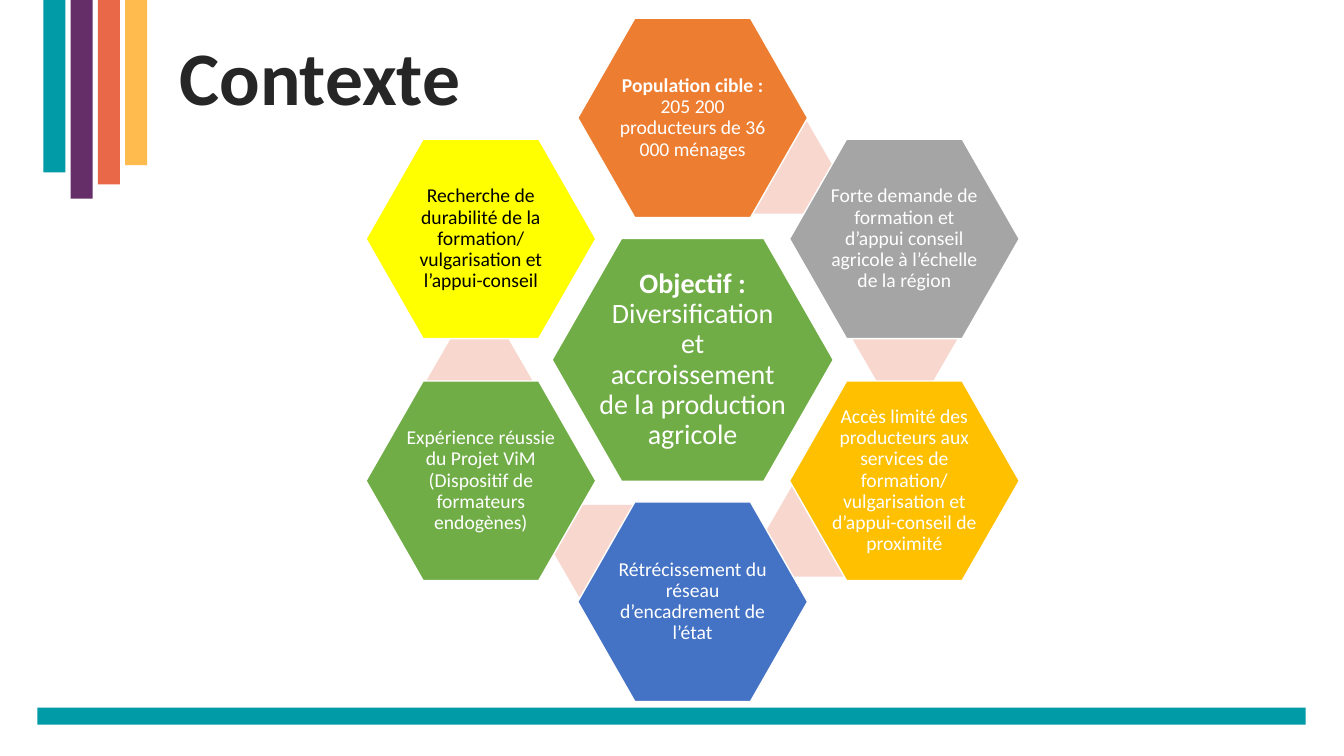
import pptx
import pptx.dml.color
import pptx.enum.shapes
import pptx.enum.text
import pptx.util

Inches = pptx.util.Inches
Pt = pptx.util.Pt
ShapeType = pptx.enum.shapes.MSO_SHAPE
Align = pptx.enum.text.PP_ALIGN
Anchor = pptx.enum.text.MSO_ANCHOR

THEME = {
    "font": "Calibri",
    "title_size": 54,
    "goal_size": 20,
    "label_size": 14,
    "title": "262626",
    "white": "FFFFFF",
    "black": "000000",
    "teal": "009BA7",
    "purple": "662E68",
    "coral": "E96848",
    "amber": "FFBB4D",
    "link": "F8D7CE",
    "green": "70AD47",
    "orange": "ED7D31",
    "grey": "A5A5A5",
    "gold": "FFC000",
    "blue": "4472C4",
    "yellow": "FFFF00",
}


def add_filled(kind, left, top, width, height, color):
    shape = slide.shapes.add_shape(
        kind, Inches(left), Inches(top), Inches(width), Inches(height)
    )
    shape.shadow.inherit = False
    shape.fill.solid()
    shape.fill.fore_color.rgb = pptx.dml.color.RGBColor.from_string(THEME[color])
    shape.line.fill.background()
    return shape


def add_hexagon(center_x, center_y, width, height, color, heading, body, size, text_color, inset):
    shape = add_filled(
        ShapeType.HEXAGON, center_x - width / 2, center_y - height / 2, width, height, color
    )
    shape.adjustments[0] = 0.286
    shape.line.color.rgb = pptx.dml.color.RGBColor.from_string(THEME["white"])
    shape.line.width = Pt(1)
    frame = shape.text_frame
    frame.word_wrap = True
    frame.vertical_anchor = Anchor.MIDDLE
    frame.margin_left = frame.margin_right = Inches(inset)
    frame.margin_top = frame.margin_bottom = Inches(0.02)
    paragraph = frame.paragraphs[0]
    paragraph.alignment = Align.CENTER
    paragraph.line_spacing = 0.9
    for text, bold in ((heading, True), (body, False)):
        if text:
            run = paragraph.add_run()
            run.text = text
            run.font.name = THEME["font"]
            run.font.size = Pt(THEME[size])
            run.font.bold = bold
            run.font.color.rgb = pptx.dml.color.RGBColor.from_string(THEME[text_color])


presentation = pptx.Presentation()
presentation.slide_width = Inches(13.33)
presentation.slide_height = Inches(7.5)
slide = presentation.slides.add_slide(presentation.slide_layouts[5])

add_filled(ShapeType.RECTANGLE, 0.37, 7.02, 12.58, 0.17, "teal")
bars = [("teal", 1.71), ("purple", 1.97), ("coral", 1.83), ("amber", 1.64)]
for index, (color, height) in enumerate(bars):
    add_filled(ShapeType.RECTANGLE, 0.43 + 0.27 * index, 0, 0.22, height, color)

CENTER_X, CENTER_Y = 6.87, 3.57
COLUMN_STEP, ROW_STEP = 2.1, 1.2

add_hexagon(
    CENTER_X, CENTER_Y, 2.79, 2.41, "green", "Objectif : ",
    "Diversification et accroissement de la production agricole",
    "goal_size", "white", 0,
)

ring = [
    (0, -2, "orange", "white", (7.22, 1.21), "Population cible : ",
     "205 200 producteurs de 36 000 ménages"),
    (1, -1, "grey", "white", (8.45, 2.9), "",
     "Forte demande de formation et d’appui conseil agricole à l’échelle de la région"),
    (1, 1, "gold", "white", (7.6, 4.81), "",
     "Accès limité des producteurs aux services de formation/ vulgarisation et "
     "d’appui-conseil de proximité"),
    (0, 2, "blue", "white", (5.48, 5.01), "",
     "Rétrécissement du réseau d’encadrement de l’état"),
    (-1, 1, "green", "white", (4.23, 3.32), "",
     "Expérience réussie du Projet ViM (Dispositif de formateurs endogènes)"),
    (-1, -1, "yellow", "black", None, "",
     "Recherche de durabilité de la formation/ vulgarisation et l’appui-conseil"),
]
for column, row, color, text_color, link, heading, body in ring:
    if link:
        link_shape = add_filled(ShapeType.HEXAGON, *link, 1.05, 0.91, "link")
        link_shape.adjustments[0] = 0.289
    add_hexagon(
        CENTER_X + column * COLUMN_STEP, CENTER_Y + row * ROW_STEP, 2.28, 1.98,
        color, heading, body, "label_size", text_color, 0.02,
    )

title = slide.shapes.title
title.left, title.top = Inches(1.68), Inches(0.38)
title.width, title.height = Inches(4.47), Inches(0.84)
title.text_frame.text = "Contexte"
title.text_frame.vertical_anchor = Anchor.MIDDLE
title.text_frame.auto_size = pptx.enum.text.MSO_AUTO_SIZE.NONE
paragraph = title.text_frame.paragraphs[0]
paragraph.alignment = Align.LEFT
paragraph.line_spacing = 0.9
font = paragraph.runs[0].font
font.name = THEME["font"]
font.size = Pt(THEME["title_size"])
font.bold = True
font.color.rgb = pptx.dml.color.RGBColor.from_string(THEME["title"])

presentation.save("out.pptx")
